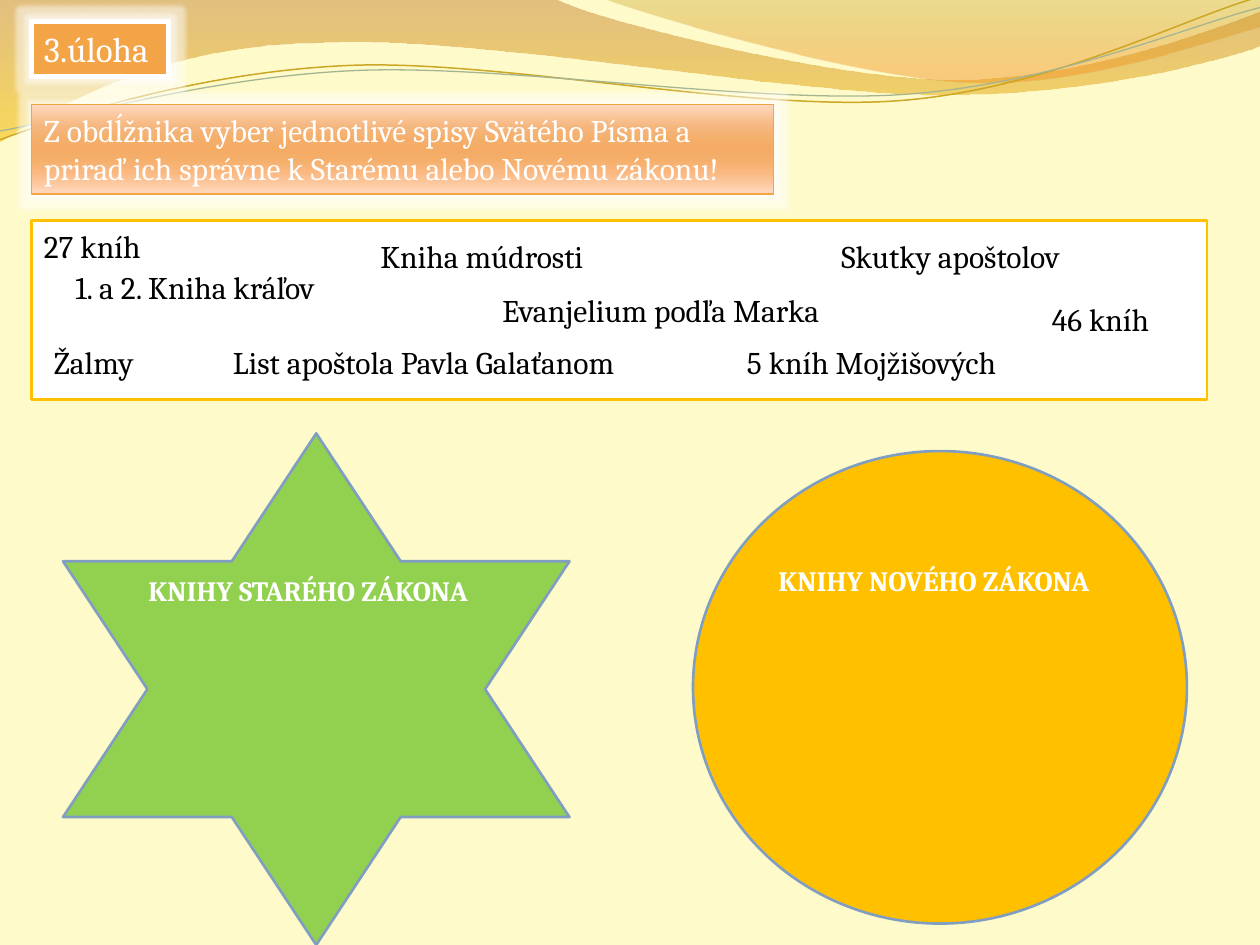
"""Build a worksheet slide about sorting the books of the Old and New Testament."""
from lxml import etree
from pptx import Presentation
from pptx.dml.color import RGBColor
from pptx.enum.shapes import MSO_SHAPE as Preset
from pptx.enum.text import MSO_ANCHOR as Anchor, PP_ALIGN as Align
from pptx.oxml.ns import qn
from pptx.util import Inches, Pt

FONT = "Cambria"
COLORS = {
    "background": "FEFAC9", "white": "FFFFFF", "black": "000000",
    "gold": "FFC000", "green": "92D050", "blue": "809EC2",
    "orange": "F3A447", "wave_gold": "CCA624", "wave_green": "A5B592",
}
WAVE_BANDS = [
    {"start": (0, -0.01), "steps": [
        [(4.4, -0.01)],
        [(4.76, 0.17), (6.64, 0.63), (7.58, 0.63)],
        [(8.53, 0.63), (9.58, 0.26), (10, 0.09)],
        [(10.01, 0.36)],
        [(9.83, 0.44), (8.7, 0.76), (7.46, 0.75)],
        [(6.22, 0.75), (3.82, 0.28), (2.57, 0.34)],
        [(1.29, 0.35), (0.46, 0.83), (-0.01, 1.13)]],
     "stops": [(0, "C07A28", 45), (100, "F7BF00", 55)]},
    {"start": (4.79, -0.01), "steps": [
        [(5.09, 0.11), (6.82, 0.62), (7.69, 0.65)],
        [(8.56, 0.69), (9.61, 0.32), (10, 0.21)],
        [(10, 0)]],
     "stops": [(0, "C09709", 30), (80, "F59320", 45)]},
]
WAVE_LINES = [
    {"start": (0, 1.11), "color": "wave_gold", "width": 0.85, "steps": [
        [(0.48, 0.93), (1.58, 0.57), (2.77, 0.52)],
        [(3.95, 0.47), (5.93, 0.89), (7.13, 0.8)],
        [(8.33, 0.71), (9.38, 0.15), (9.98, -0.02)]]},
    {"start": (0, 1.04), "color": "wave_green", "width": 0.75, "steps": [
        [(0.47, 0.96), (1.64, 0.61), (2.83, 0.56)],
        [(4.03, 0.51), (5.97, 0.83), (7.17, 0.75)],
        [(8.36, 0.67), (9.41, 0.21), (10, 0.06)]]},
]
BANNER_STOPS = [
    (0, "FFD8BE", 100), (25, "F5B67D", 100), (40, "F4AE69", 100),
    (50, "F4AC65", 100), (60, "F4AE69", 100), (75, "FAB77E", 100),
    (100, "FFD8BE", 100),
]
PANELS = [
    {"preset": Preset.OVAL, "box": (5.5, 3.58, 3.92, 3.75),
     "fill": "gold", "line": "blue", "width": 1.5},
    {"preset": Preset.STAR_6_POINT, "box": (0.5, 3.44, 4.02, 4.06),
     "fill": "green", "line": "blue", "width": 1.5},
    {"box": (0.25, 1.75, 9.33, 1.42),
     "fill": "white", "line": "gold", "width": 1.5,
     "lines": ["Evanjelium podľa Marka"],
     "text": {"color": "black", "align": Align.CENTER},
     "frame": {"word_wrap": True, "vertical_anchor": Anchor.MIDDLE,
               "margin_left": Inches(0.76)}},
    {"box": (0.25, 0.17, 1.09, 0.44),
     "fill": "orange", "line": "white", "width": 3, "glow": 0.07,
     "lines": ["3.úloha"], "text": {"size": 20, "color": "white"}},
    {"box": (0.25, 0.83, 5.89, 0.71),
     "stops": BANNER_STOPS, "line": "orange", "width": 0.94, "glow": 0.07,
     "lines": ["Z obdĺžnika vyber jednotlivé spisy Svätého Písma a",
               "priraď ich správne k Starému alebo Novému zákonu!"],
     "text": {"color": "white"}},
]
BOOKS = [
    ("Žalmy", 0.33, 2.67, 0.88),
    ("5 kníh Mojžišových", 5.83, 2.67, 2.3),
    ("Skutky apoštolov", 6.58, 1.83, 2.05),
    ("1. a 2. Kniha kráľov", 0.5, 2.08, 2.23),
    ("List apoštola Pavla Galaťanom", 1.75, 2.67, 3.46),
    ("Kniha múdrosti", 2.92, 1.83, 1.91),
    ("27 kníh", 0.25, 1.75, 1.01),
    ("46 kníh", 8.25, 2.33, 1.03),
]
HEADINGS = [
    ("KNIHY STARÉHO ZÁKONA", 1.08, 4.5, 3.05),
    ("KNIHY NOVÉHO ZÁKONA", 6.08, 4.42, 2.99),
]


def rgb(name):
    return RGBColor.from_string(COLORS[name])


def add_color(parent, value, alpha):
    color = etree.SubElement(parent, qn("a:srgbClr"), val=value)
    if alpha < 100:
        etree.SubElement(color, qn("a:alpha"), val=str(alpha * 1000))


def fill_gradient(shape, stops):
    shape.fill.background()
    properties = shape._element.spPr
    gradient = etree.Element(qn("a:gradFill"), rotWithShape="1")
    stop_list = etree.SubElement(gradient, qn("a:gsLst"))
    for position, value, alpha in stops:
        stop = etree.SubElement(stop_list, qn("a:gs"), pos=str(position * 1000))
        add_color(stop, value, alpha)
    etree.SubElement(gradient, qn("a:lin"), ang="5400000", scaled="0")
    properties.replace(properties.find(qn("a:noFill")), gradient)


def add_glow(shape, radius):
    effects = shape._element.spPr.find(qn("a:effectLst"))
    glow = etree.SubElement(effects, qn("a:glow"), rad=str(Inches(radius)))
    add_color(glow, COLORS["white"], 50)


def set_line(shape, color, width):
    shape.line.color.rgb = rgb(color)
    shape.line.width = Pt(width)


def add_wave(slide, wave, close):
    builder = slide.shapes.build_freeform(*map(Inches, wave["start"]))
    corners = [tuple(map(Inches, corner)) for step in wave["steps"] for corner in step]
    builder.add_line_segments(corners, close=close)
    shape = builder.convert_to_shape()
    shape.shadow.inherit = False
    segments = iter(list(shape._element.spPr.iter(qn("a:lnTo"))))
    for step in wave["steps"]:
        group = [next(segments) for corner in step]
        if len(group) == 3:
            curve = etree.Element(qn("a:cubicBezTo"))
            group[0].addprevious(curve)
            for segment in group:
                curve.append(segment[0])
                segment.getparent().remove(segment)
    return shape


def write(shape, lines, size=18, color="black", bold=False, align=Align.LEFT, frame=None):
    text_frame = shape.text_frame
    settings = {"word_wrap": False, "vertical_anchor": Anchor.TOP, **(frame or {})}
    for name, value in settings.items():
        setattr(text_frame, name, value)
    text_frame.text = "\n".join(lines)
    for paragraph in text_frame.paragraphs:
        paragraph.alignment = align
        font = paragraph.runs[0].font
        for name, value in {"name": FONT, "size": Pt(size), "bold": bold}.items():
            setattr(font, name, value)
        font.color.rgb = rgb(color)


def add_panel(slide, panel):
    shape = slide.shapes.add_shape(panel.get("preset", Preset.RECTANGLE), *map(Inches, panel["box"]))
    shape.shadow.inherit = False
    if "stops" in panel:
        fill_gradient(shape, panel["stops"])
    else:
        shape.fill.solid()
        shape.fill.fore_color.rgb = rgb(panel["fill"])
    set_line(shape, panel["line"], panel["width"])
    if "glow" in panel:
        add_glow(shape, panel["glow"])
    if "lines" in panel:
        write(shape, panel["lines"], frame=panel.get("frame"), **panel["text"])


def main():
    presentation = Presentation()
    presentation.slide_width, presentation.slide_height = Inches(10), Inches(7.5)
    slide = presentation.slides.add_slide(presentation.slide_layouts[6])
    slide.background.fill.solid()
    slide.background.fill.fore_color.rgb = rgb("background")

    for band in WAVE_BANDS:
        shape = add_wave(slide, band, close=True)
        fill_gradient(shape, band["stops"])
        shape.line.fill.background()
    for wave in WAVE_LINES:
        shape = add_wave(slide, wave, close=False)
        shape.fill.background()
        set_line(shape, wave["color"], wave["width"])
    for panel in PANELS:
        add_panel(slide, panel)

    label_styles = [(BOOKS, 0.4, {}), (HEADINGS, 0.37, {"size": 16, "color": "white", "bold": True})]
    for labels, height, style in label_styles:
        for text, left, top, width in labels:
            box = slide.shapes.add_textbox(*map(Inches, (left, top, width, height)))
            write(box, [text], **style)
    presentation.save("out.pptx")


if __name__ == "__main__":
    main()
